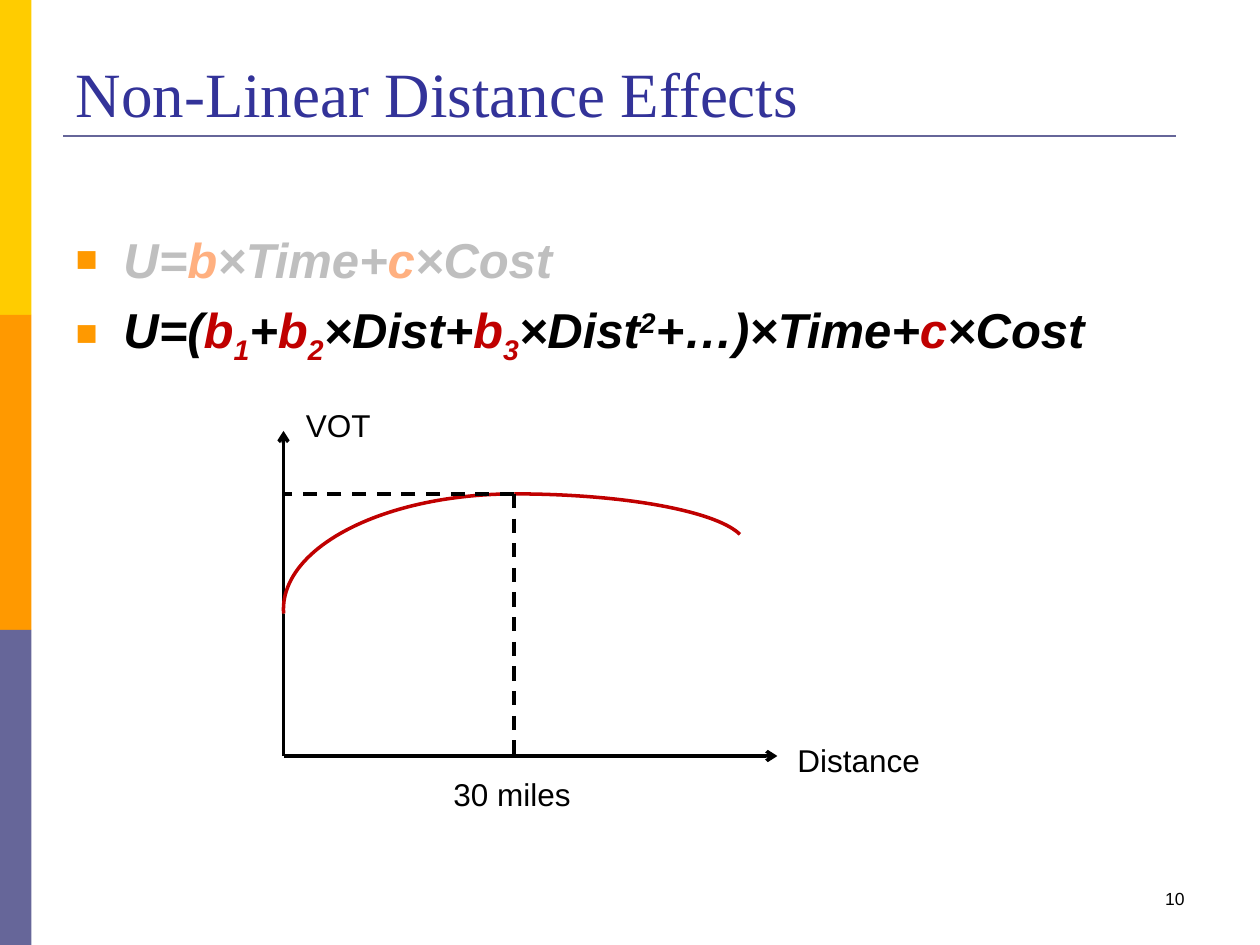
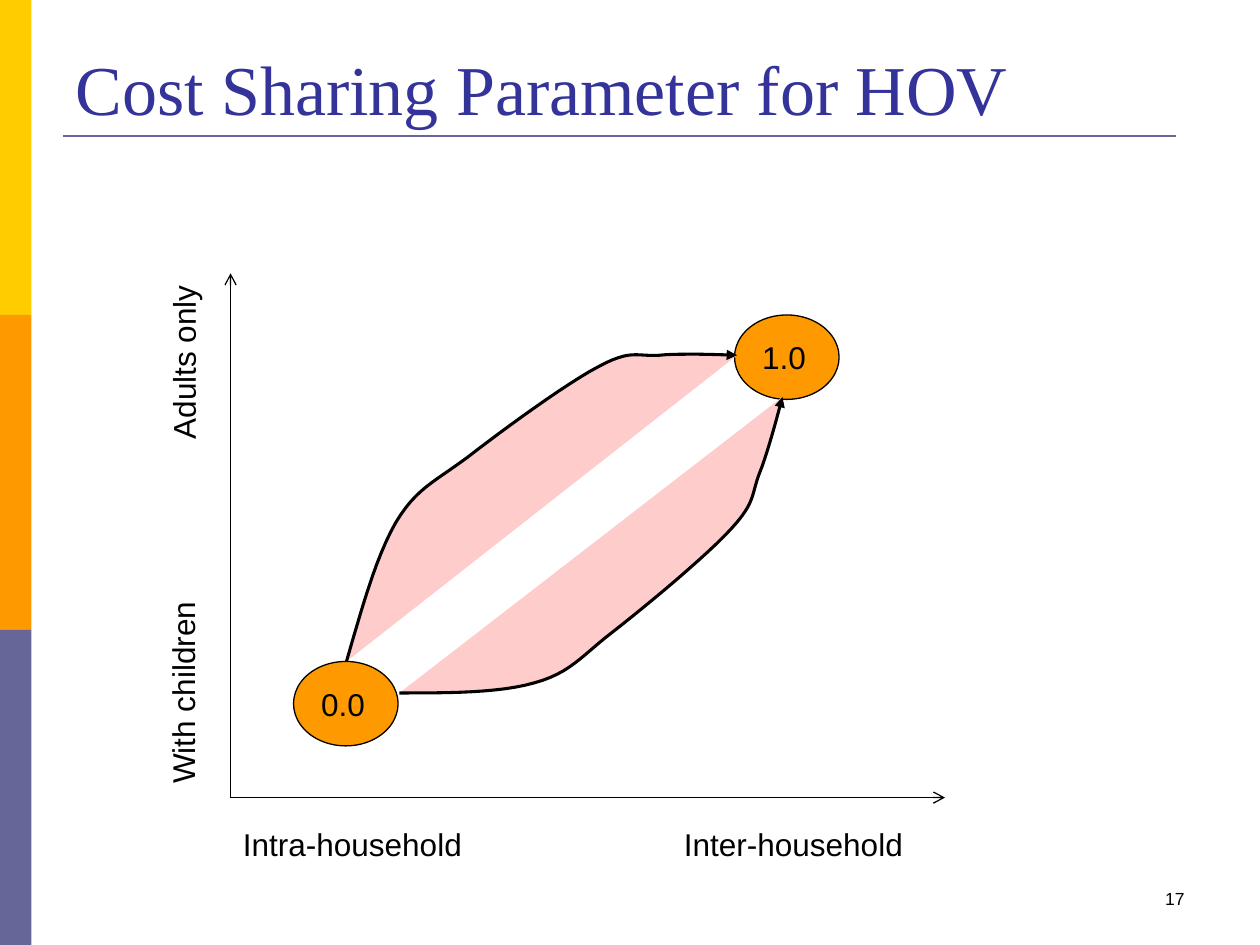
from lxml import etree
from pptx import Presentation
from pptx.dml.color import RGBColor
from pptx.enum.dml import MSO_LINE
from pptx.enum.shapes import MSO_CONNECTOR, MSO_SHAPE
from pptx.enum.text import MSO_ANCHOR, MSO_AUTO_SIZE, PP_ALIGN
from pptx.oxml.ns import qn
from pptx.util import Inches, Pt

STRAIGHT = MSO_CONNECTOR.STRAIGHT
RECTANGLE, OVAL, ARC = MSO_SHAPE.RECTANGLE, MSO_SHAPE.OVAL, MSO_SHAPE.ARC
DASH = MSO_LINE.DASH
TOP, MIDDLE, BOTTOM = MSO_ANCHOR.TOP, MSO_ANCHOR.MIDDLE, MSO_ANCHOR.BOTTOM
LEFT, RIGHT = PP_ALIGN.LEFT, PP_ALIGN.RIGHT
NO_FIT = MSO_AUTO_SIZE.NONE
BODY_LAYOUT, TITLE_LAYOUT = 1, 5

COLORS = {
    "yellow": "FFCC00", "orange": "FF9900", "slate": "666699",
    "title": "333399", "black": "000000", "white": "FFFFFF",
    "red": "C00000", "faded": "BFBFBF", "faded_red": "FFB080", "pink": "FFCCCC",
}
SANS, SERIF = "Arial", "Times New Roman"
SUBSCRIPT, SUPERSCRIPT = -25000, 30000

# Formula spans: text, colour, baseline shift
OLD_UTILITY = [("U=", "faded", 0), ("b", "faded_red", 0), ("×Time+", "faded", 0),
               ("c", "faded_red", 0), ("×Cost", "faded", 0)]
NEW_UTILITY = [("U=(", "black", 0),
               ("b", "red", 0), ("1", "red", SUBSCRIPT), ("+", "black", 0),
               ("b", "red", 0), ("2", "red", SUBSCRIPT), ("×Dist+", "black", 0),
               ("b", "red", 0), ("3", "red", SUBSCRIPT), ("×Dist", "black", 0),
               ("2", "black", SUPERSCRIPT), ("+…)×Time+", "black", 0),
               ("c", "red", 0), ("×Cost", "black", 0)]

# Bezier chains relative to the chart corner: a start, then three points per curve
UPPER_CURVE = [(0.92, 3.08),
               (1.04, 2.67), (1.15, 2.26), (1.31, 1.98),
               (1.47, 1.71), (1.61, 1.66), (1.88, 1.46),
               (2.15, 1.25), (2.67, 0.87), (2.92, 0.74),
               (3.18, 0.60), (3.22, 0.66), (3.40, 0.65),
               (3.58, 0.63), (4.02, 0.65), (4.02, 0.65)]
LOWER_CURVE = [(1.34, 3.33),
               (1.73, 3.33), (2.13, 3.33), (2.41, 3.25),
               (2.70, 3.17), (2.78, 3.04), (3.04, 2.84),
               (3.31, 2.63), (3.79, 2.23), (3.98, 2.02),
               (4.17, 1.81), (4.13, 1.76), (4.20, 1.58),
               (4.27, 1.41), (4.38, 0.98), (4.38, 0.98)]


def rgb(name):
    return RGBColor.from_string(COLORS[name])


def inches(values):
    return [Inches(value) for value in values]


def add_span(para, text, size=18, font=SANS, color="black", bold=False,
             italic=False, baseline=0):
    span = para.add_run()
    span.text = text
    span.font.size = Pt(size)
    span.font.name = font
    span.font.color.rgb = rgb(color)
    span.font.bold = bold
    span.font.italic = italic
    if baseline:
        span._r.get_or_add_rPr().set("baseline", str(baseline))


def add_label(page, text, box, wrap=True, align=LEFT, rotation=0, **format):
    label = page.shapes.add_textbox(*inches(box))
    label.rotation = rotation
    label.text_frame.word_wrap = wrap
    para = label.text_frame.paragraphs[0]
    para.alignment = align
    add_span(para, text, **format)


def add_figure(page, kind, box, fill, line=None, width=0.75):
    figure = page.shapes.add_shape(kind, *inches(box))
    paint(figure, fill, line, width)
    return figure


def paint(figure, fill, line, width):
    figure.shadow.inherit = False
    figure.fill.solid()
    figure.fill.fore_color.rgb = rgb(fill)
    if line:
        figure.line.color.rgb = rgb(line)
        figure.line.width = Pt(width)
    else:
        figure.line.fill.background()


def add_arrowhead(figure, kind):
    outline = figure.element.spPr.find(qn("a:ln"))
    etree.SubElement(outline, qn("a:tailEnd"), type=kind)


def add_line(page, start, end, width, color="black", dash=None, arrow=None):
    line = page.shapes.add_connector(STRAIGHT, *inches(start + end))
    line.line.color.rgb = rgb(color)
    line.line.width = Pt(width)
    if dash:
        line.line.dash_style = dash
    if arrow:
        add_arrowhead(line, arrow)
    etree.SubElement(line.element.spPr, qn("a:effectLst"))


def add_axes(page, box, width):
    left, top, across, down = box
    origin = (left, top + down)
    for end in ((left + across, top + down), (left, top)):
        add_line(page, origin, end, width, arrow="arrow")


def place(holder, box, anchor):
    holder.left, holder.top, holder.width, holder.height = inches(box)
    frame = holder.text_frame
    frame.auto_size = NO_FIT
    frame.word_wrap = True
    frame.vertical_anchor = anchor
    return frame


def add_page(deck, layout, title, title_size, number):
    page = deck.slides.add_slide(deck.slide_layouts[layout])
    # Side bands and title rule
    for row, color in enumerate(("yellow", "orange", "slate")):
        add_figure(page, RECTANGLE, (0, 2.5 * row, 0.25, 2.5), color)
    add_line(page, (0.5, 1.08), (9.33, 1.08), 1.5, "slate")
    # Title
    frame = place(page.shapes.title, (0.5, 0.3, 9, 0.78), BOTTOM)
    para = frame.paragraphs[0]
    para.alignment = LEFT
    add_span(para, title, size=title_size, font=SERIF, color="title")
    # Page number
    add_label(page, number, (7.17, 7, 2.33, 0.33), align=RIGHT, size=10)
    return page


def add_square_bullet(para):
    props = para._p.get_or_add_pPr()
    props.set("marL", str(Inches(0.38)))
    props.set("indent", str(-Inches(0.38)))
    color = etree.SubElement(props, qn("a:buClr"))
    etree.SubElement(color, qn("a:srgbClr"), val=COLORS["orange"])
    etree.SubElement(props, qn("a:buSzPct"), val="75000")
    etree.SubElement(props, qn("a:buFont"), typeface=SANS)
    etree.SubElement(props, qn("a:buChar"), char="■")


def fill_formulas(page, box):
    frame = place(page.placeholders[1], box, TOP)
    for index, formula in enumerate((OLD_UTILITY, NEW_UTILITY)):
        para = frame.add_paragraph() if index else frame.paragraphs[0]
        para.space_before = Pt(6.5 * index)
        add_square_bullet(para)
        for text, color, baseline in formula:
            add_span(para, text, size=28, color=color, bold=True, italic=True,
                     baseline=baseline)


def draw_value_of_time(page, box):
    left, top, across, down = box
    bottom = top + down
    peak_x, peak_y = left + 1.83, top + 0.5
    add_axes(page, box, 2)
    add_label(page, "Distance", (left + across + 0.06, bottom - 0.17, 1.18, 0.4), wrap=False)
    add_label(page, "VOT", (left + 0.08, top - 0.25, 0.72, 0.4), wrap=False)
    # Falling and rising parts of the curve
    for height, start, end in ((0.83, 162, 214.2), (1.83, 107.35, 162)):
        curve = add_figure(page, ARC, (left, peak_y, 3.67, height), "white", "red", 2)
        curve.adjustments[0] = start
        curve.adjustments[1] = end
    # Guides from the peak to both axes
    for end in ((peak_x, bottom), (left, peak_y)):
        add_line(page, (peak_x, peak_y), end, 2, dash=DASH)
    add_label(page, "30 miles", (left + 1.25, bottom + 0.1, 1.14, 0.4), wrap=False)


def bezier_points(chain, steps=12):
    points = [chain[0]]
    for first in range(0, len(chain) - 1, 3):
        corners = chain[first:first + 4]
        for step in range(1, steps + 1):
            t = step / steps
            weights = ((1 - t) ** 3, 3 * t * (1 - t) ** 2, 3 * t * t * (1 - t), t ** 3)
            points.append(tuple(sum(weight * corner[axis]
                                    for weight, corner in zip(weights, corners))
                                for axis in (0, 1)))
    return points


def draw_curve(page, chain, left, top):
    points = [inches((left + x, top + y)) for x, y in bezier_points(chain)]
    builder = page.shapes.build_freeform(*points[0])
    builder.add_line_segments(points[1:], close=False)
    curve = builder.convert_to_shape()
    paint(curve, "pink", "black", 1.75)
    add_arrowhead(curve, "triangle")


def draw_cost_sharing(page, box):
    left, top, across, down = box
    add_axes(page, box, 0.75)
    # Axis labels
    for text, x in (("Intra-household", 0), ("Inter-household", 3.5)):
        add_label(page, text, (left + x, top + 4.33, 2.08, 0.4))
    for text, x, y, width in (("With children", -1.42, 2.91, 2.08),
                              ("Adults only", -1.21, 0.38, 1.67)):
        add_label(page, text, (left + x, top + y, width, 0.4), rotation=270)
    # End values
    for text, x, y in (("1.0", 4, 0.33), ("0.0", 0.5, 3.08)):
        node = add_figure(page, OVAL, (left + x, top + y, 0.83, 0.67), "orange", "black")
        node.text_frame.vertical_anchor = MIDDLE
        para = node.text_frame.paragraphs[0]
        para.alignment = LEFT
        add_span(para, text)
    # Range between the end values
    for chain in (UPPER_CURVE, LOWER_CURVE):
        draw_curve(page, chain, left, top)


def main():
    deck = Presentation()
    deck.slide_width, deck.slide_height = Inches(10), Inches(7.5)

    page = add_page(deck, BODY_LAYOUT, "Non-Linear Distance Effects", 36, "10")
    fill_formulas(page, (0.5, 1.77, 9.25, 5.06))
    draw_value_of_time(page, (2.25, 3.42, 3.92, 2.58))

    page = add_page(deck, TITLE_LAYOUT, "Cost Sharing Parameter for HOV", 40, "17")
    draw_cost_sharing(page, (1.83, 2.17, 5.67, 4.16))

    deck.save("out.pptx")


if __name__ == "__main__":
    main()
